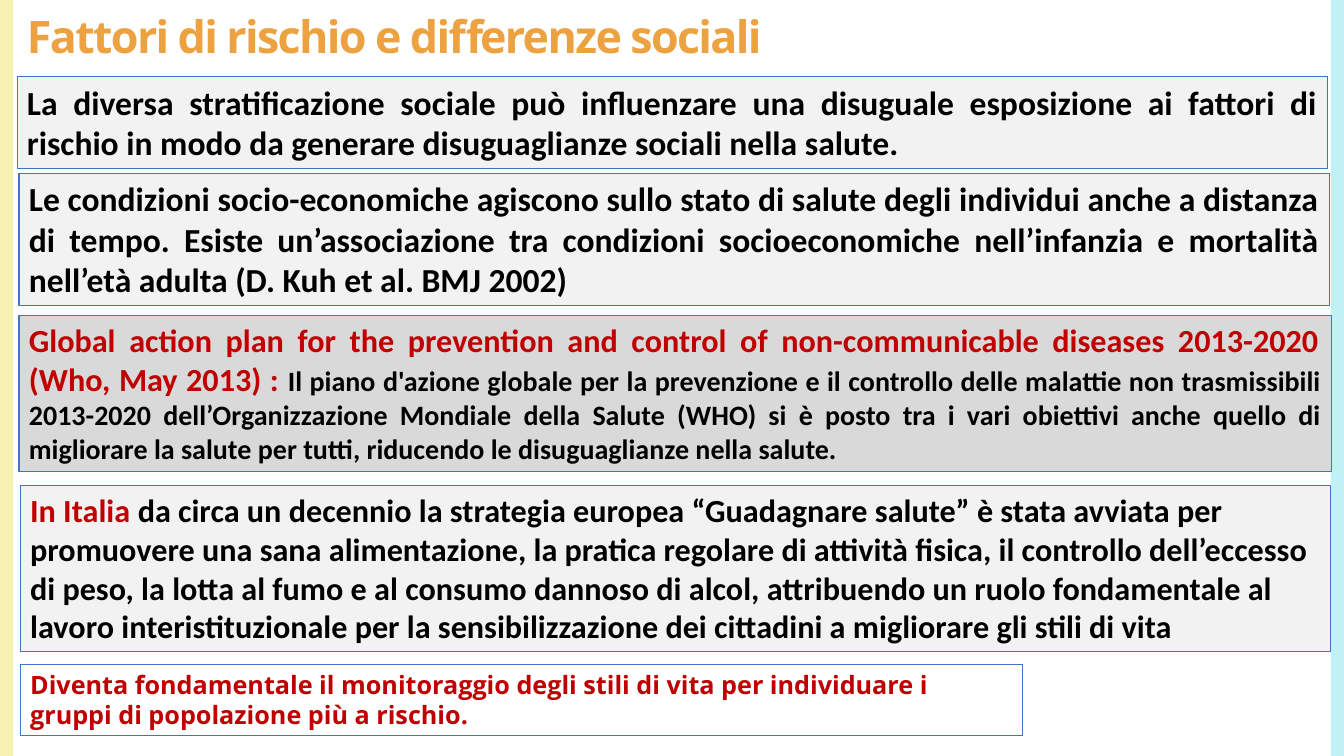
"""Build the slide on risk factors and social differences."""
from dataclasses import dataclass

from pptx import Presentation
from pptx.dml.color import RGBColor
from pptx.enum.shapes import MSO_SHAPE
from pptx.enum.text import MSO_ANCHOR, MSO_AUTO_SIZE, PP_ALIGN
from pptx.slide import Slide
from pptx.util import Cm, Pt

WIDTH, HEIGHT, BAR = 33.87, 19.05, 0.33
RED, BLACK, BLUE, ORANGE = "C00000", "000000", "4472C4", "EDA242"
LIGHT, GREY, YELLOW, CYAN = "F2F2F2", "D9D9D9", "F7F2B1", "C0F1F4"


@dataclass
class Span:
    text: str
    size: float
    color: str = BLACK


@dataclass
class Box:
    left: float
    top: float
    width: float
    height: float
    spans: list[Span]
    fill: str | None = LIGHT
    line: str | None = BLUE
    align: PP_ALIGN = PP_ALIGN.LEFT
    font: str = "Calibri"
    anchor: MSO_ANCHOR = MSO_ANCHOR.TOP
    line_spacing: float = 1.0
    tracking: int = 0


TITLE = Box(0.43, 0, 29.97, 1.96,
            [Span("Fattori di rischio e differenze sociali", 32, ORANGE)],
            fill=None, line=None, font="Open Sans", anchor=MSO_ANCHOR.MIDDLE,
            line_spacing=0.9, tracking=-120)

BOXES = [
    Box(0.43, 1.93, 33.02, 2.31, [
        Span("La diversa stratificazione sociale può influenzare una disuguale "
             "esposizione ai fattori di rischio in modo da generare disuguaglianze "
             "sociali nella salute.", 24),
    ], align=PP_ALIGN.JUSTIFY),
    Box(0.48, 4.37, 33.02, 3.33, [
        Span("Le condizioni socio-economiche agiscono sullo stato di salute degli "
             "individui anche a distanza di tempo. Esiste un’associazione tra "
             "condizioni socioeconomiche nell’infanzia e mortalità nell’età adulta "
             "(D. Kuh et al. BMJ 2002)", 24),
    ], align=PP_ALIGN.JUSTIFY),
    Box(0.48, 7.95, 33.07, 3.94, [
        Span("Global action plan for the prevention and control of non-communicable "
             "diseases 2013-2020 (Who, May 2013) : ", 23, RED),
        Span("Il piano d'azione globale per la prevenzione e il controllo delle "
             "malattie non trasmissibili 2013-2020 dell’Organizzazione Mondiale della "
             "Salute (WHO) si è posto tra i vari obiettivi anche quello di migliorare "
             "la salute per tutti, riducendo le disuguaglianze nella salute.", 20),
    ], fill=GREY, align=PP_ALIGN.JUSTIFY),
    Box(0.51, 12.24, 33.02, 4.19, [
        Span("In Italia ", 23, RED),
        Span("da circa un decennio la strategia europea “Guadagnare salute” è stata "
             "avviata per promuovere una sana alimentazione, la pratica regolare di "
             "attività fisica, il controllo dell’eccesso di peso, la lotta al fumo e "
             "al consumo dannoso di alcol, attribuendo un ruolo fondamentale al lavoro "
             "interistituzionale per la sensibilizzazione dei cittadini a migliorare "
             "gli stili di vita", 23),
    ]),
    Box(0.51, 16.74, 25.25, 1.8, [
        Span("Diventa fondamentale il monitoraggio degli stili di vita per "
             "individuare i gruppi di popolazione più a rischio.", 18, RED),
    ], fill=None, font="Open Sans"),
]


def rgb(value: str) -> RGBColor:
    return RGBColor.from_string(value)


def add_bar(s: Slide, left: float, color: str) -> None:
    sp = s.shapes.add_shape(MSO_SHAPE.RECTANGLE, Cm(left), 0, Cm(BAR), Cm(HEIGHT))
    sp.shadow.inherit = False
    sp.fill.solid()
    sp.fill.fore_color.rgb = rgb(color)
    sp.line.fill.background()


def add_box(s: Slide, box: Box) -> None:
    sp = s.shapes.add_textbox(Cm(box.left), Cm(box.top), Cm(box.width), Cm(box.height))
    if box.fill:
        sp.fill.solid()
        sp.fill.fore_color.rgb = rgb(box.fill)
    if box.line:
        sp.line.color.rgb = rgb(box.line)
        sp.line.width = Pt(0.75)
    tf = sp.text_frame
    tf.word_wrap = True
    tf.auto_size = MSO_AUTO_SIZE.SHAPE_TO_FIT_TEXT if box.line else MSO_AUTO_SIZE.NONE
    tf.vertical_anchor = box.anchor
    p = tf.paragraphs[0]
    p.alignment = box.align
    p.line_spacing = box.line_spacing
    p.font.name = box.font
    p.font.bold = True
    for span in box.spans:
        r = p.add_run()
        r.text = span.text
        r.font.size = Pt(span.size)
        r.font.color.rgb = rgb(span.color)
        if box.tracking:
            r.font._element.set("spc", str(box.tracking))


def main() -> None:
    prs = Presentation()
    prs.slide_width, prs.slide_height = Cm(WIDTH), Cm(HEIGHT)
    s = prs.slides.add_slide(prs.slide_layouts[6])
    add_bar(s, 0, YELLOW)
    add_bar(s, WIDTH - BAR, CYAN)
    for box in [TITLE, *BOXES]:
        add_box(s, box)
    prs.save("out.pptx")


if __name__ == "__main__":
    main()
